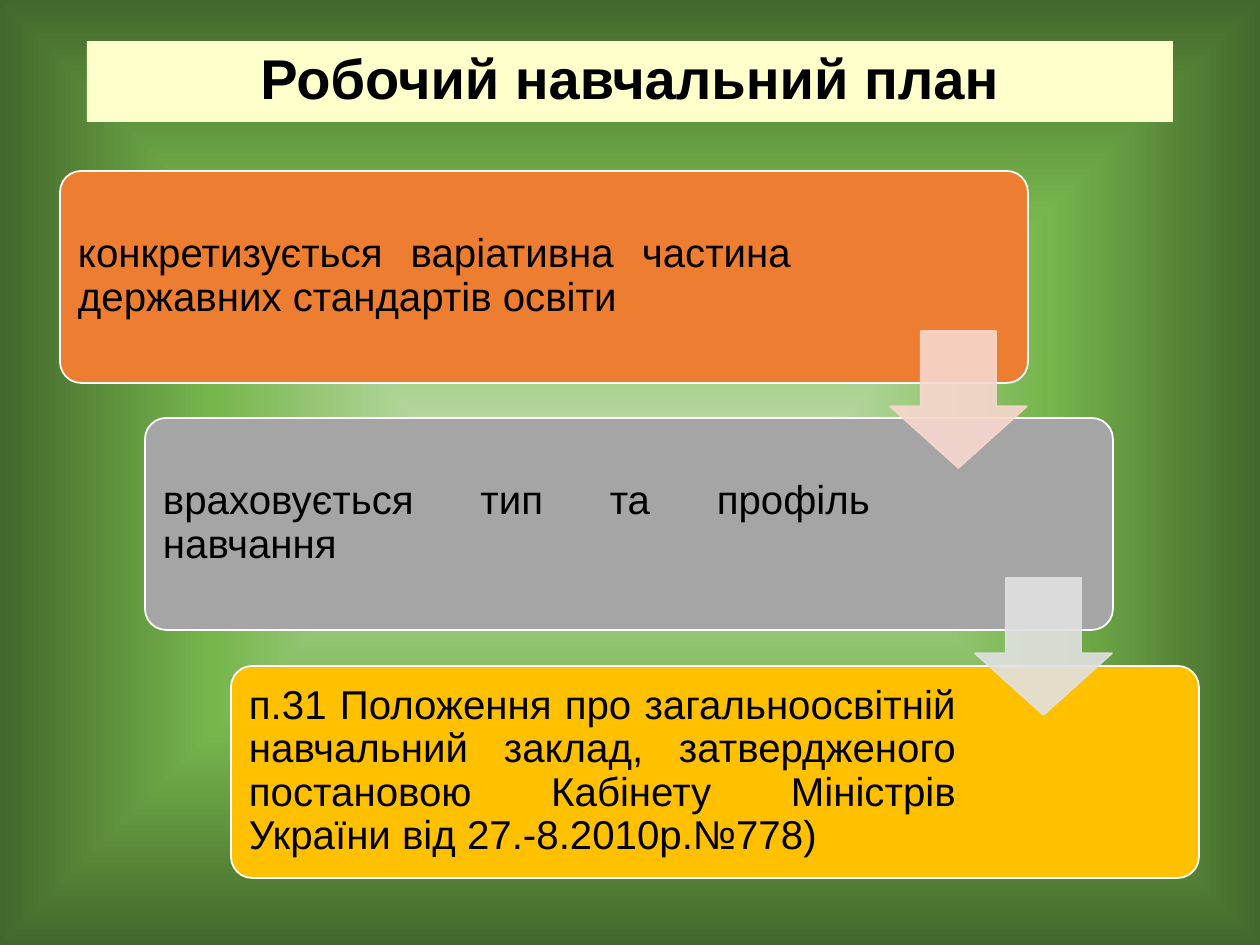
from dataclasses import dataclass

from pptx import Presentation
from pptx.dml.color import RGBColor
from pptx.enum.shapes import MSO_SHAPE
from pptx.enum.text import MSO_ANCHOR, PP_ALIGN
from pptx.oxml import parse_xml
from pptx.oxml.ns import nsdecls, qn
from pptx.util import Emu, Pt

SCALE = 914400 / 126


@dataclass(frozen=True)
class Theme:
    """Colours and type sizes of the slide."""
    font: str = "Arial"
    ink: str = "000000"
    edge: str = "FFFFFF"
    title: str = "FFFFCC"
    cards: tuple = ("ED7D31", "A5A5A5", "FFC000")
    arrows: tuple = ("F8D7CE", "E1E1E1")
    glow: tuple = ((0, "C5E0B4"), (55, "76B54C"), (100, "43682B"))
    head: int = 32
    body: int = 23


THEME = Theme()
TITLE = "Робочий навчальний план"
STEPS = (
    ("конкретизується варіативна частина державних стандартів освіти", 738),
    ("враховується тип та профіль навчання", 732),
    ("п.31 Положення про загальноосвітній навчальний заклад, затвердженого "
     "постановою Кабінету Міністрів України від 27.-8.2010р.№778)", 732),
)


def px(num):
    """Turn pixels into EMU."""
    return Emu(round(num * SCALE))


def paint(slide):
    """Fill the background with a glow from the centre."""
    slide.background.fill.gradient()
    old = slide.element.find(".//" + qn("a:gradFill"))
    stops = "".join(f'<a:gs pos="{pos * 1000}"><a:srgbClr val="{tint}"/></a:gs>'
                    for pos, tint in THEME.glow)
    new = parse_xml(
        f'<a:gradFill {nsdecls("a")} rotWithShape="1"><a:gsLst>{stops}</a:gsLst>'
        '<a:path path="shape"><a:fillToRect l="50000" t="50000" r="50000" b="50000"/>'
        '</a:path></a:gradFill>')
    old.getparent().replace(old, new)


def block(slide, kind, box, tint, edge=None, adjust=(), alpha=None):
    """Add a filled preset shape."""
    shape = slide.shapes.add_shape(kind, *map(px, box))
    shape.shadow.inherit = False
    for idx, val in enumerate(adjust):
        shape.adjustments[idx] = val
    shape.fill.solid()
    shape.fill.fore_color.rgb = RGBColor.from_string(tint)
    if edge:
        shape.line.color.rgb = RGBColor.from_string(edge)
        shape.line.width = Pt(1)
    else:
        shape.line.fill.background()
    if alpha:
        for clr in shape.element.spPr.iter(qn("a:srgbClr")):
            clr.append(parse_xml(f'<a:alpha {nsdecls("a")} val="{alpha * 1000}"/>'))
    return shape


def write(shape, text, size, align, bold=False, pad=None):
    """Set the text of a shape and its format."""
    frame = shape.text_frame
    frame.word_wrap = True
    frame.vertical_anchor = MSO_ANCHOR.MIDDLE
    if pad is not None:
        frame.margin_left = frame.margin_right = px(pad)
        frame.margin_top = frame.margin_bottom = px(pad)
    para = frame.paragraphs[0]
    para.alignment = align
    para.line_spacing = 0.9
    run = para.add_run()
    run.text = text
    font = run.font
    font.name, font.size, font.bold = THEME.font, Pt(size), bold
    font.color.rgb = RGBColor.from_string(THEME.ink)


def place(idx):
    """Give the left and top of a step."""
    return 60 + idx * 171 // 2, 171 + idx * 495 // 2


def step(slide, idx, text, wide):
    """Add a card and the text on it."""
    left, top = place(idx)
    block(slide, MSO_SHAPE.ROUNDED_RECTANGLE, (left, top, 968, 212),
          THEME.cards[idx], edge=THEME.edge, adjust=(0.1,))
    label = slide.shapes.add_textbox(*map(px, (left + 6, top + 6, wide, 199)))
    write(label, text, THEME.body, PP_ALIGN.JUSTIFY, pad=12)


def arrow(slide, idx, tint):
    """Add the arrow that leads from a card to the next."""
    left, top = place(idx)
    block(slide, MSO_SHAPE.DOWN_ARROW, (left + 830, top + 160, 137, 137),
          tint, edge=tint, adjust=(0.55, 0.45), alpha=90)


def main():
    """Build the slide and save it."""
    deck = Presentation()
    deck.slide_width, deck.slide_height = px(1260), px(945)
    slide = deck.slides.add_slide(deck.slide_layouts[6])
    paint(slide)
    title = block(slide, MSO_SHAPE.RECTANGLE, (87, 44, 1086, 75), THEME.title)
    title.top, title.height = px(41), px(81)
    write(title, TITLE, THEME.head, PP_ALIGN.CENTER, bold=True)
    for idx, (text, wide) in enumerate(STEPS):
        step(slide, idx, text, wide)
    for idx, tint in enumerate(THEME.arrows):
        arrow(slide, idx, tint)
    deck.save("out.pptx")


if __name__ == "__main__":
    main()
